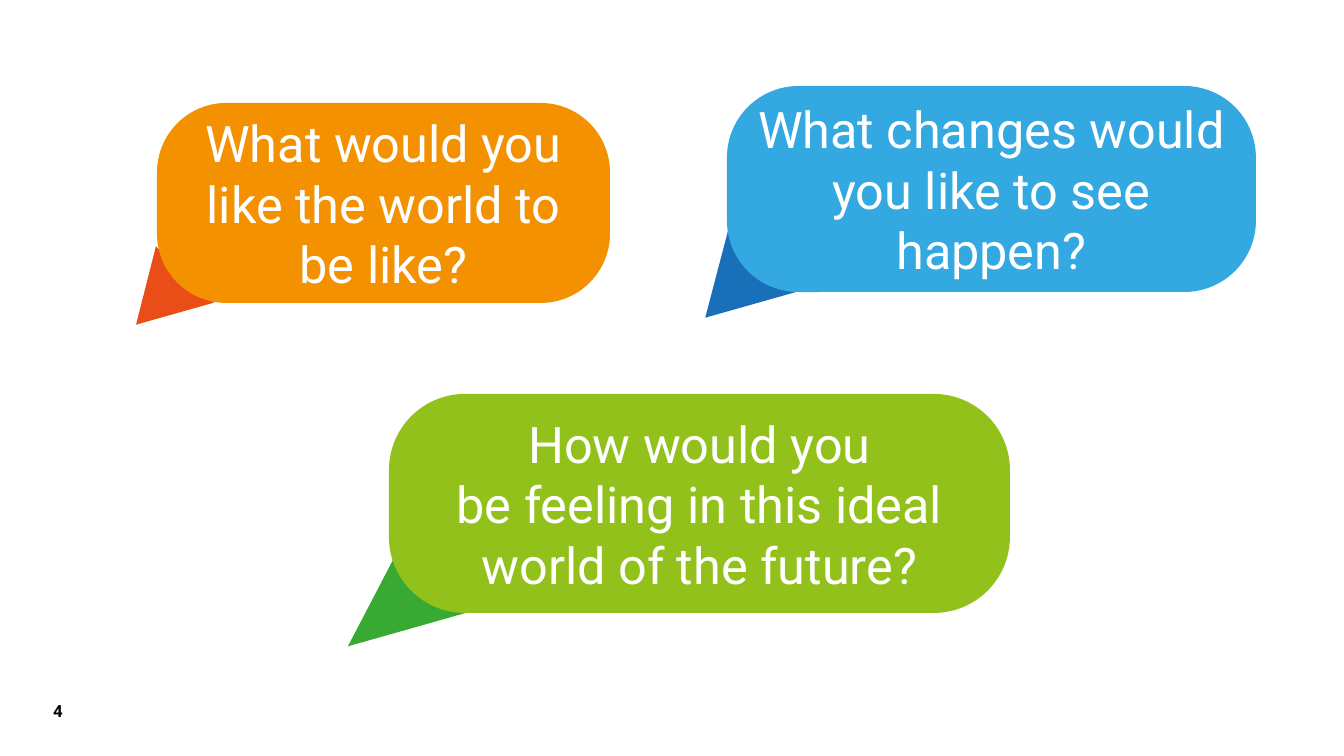
from pptx import Presentation
from pptx.dml.color import RGBColor
from pptx.enum.shapes import MSO_SHAPE
from pptx.enum.text import MSO_ANCHOR, PP_ALIGN
from pptx.util import Emu, Pt

HARD_SPACE = chr(160)


def px(length):
    return Emu(round(length * 914400 / 100.8))


def color(value):
    return RGBColor.from_string(value)


class SlideBuilder:
    font = "Roboto"
    corner = 0.347
    tail_angle = 344.2

    def __init__(self, slide):
        self.slide = slide

    def add_run(self, paragraph, text, size, fill, bold=False):
        run = paragraph.add_run()
        run.text = text
        run.font.name = self.font
        run.font.size = Pt(size)
        run.font.bold = bold
        run.font.color.rgb = color(fill)

    def add_filled(self, shapes, kind, box, fill):
        shape = shapes.add_shape(kind, *map(px, box))
        shape.shadow.inherit = False
        shape.fill.solid()
        shape.fill.fore_color.rgb = color(fill)
        shape.line.fill.background()
        return shape

    def add_bubble(self, text, box, fill, tail_box, tail_fill):
        shapes = self.slide.shapes.add_group_shape().shapes
        tail = self.add_filled(shapes, MSO_SHAPE.ISOSCELES_TRIANGLE, tail_box, tail_fill)
        tail.rotation = self.tail_angle
        body = self.add_filled(shapes, MSO_SHAPE.ROUNDED_RECTANGLE, box, fill)
        body.adjustments[0] = self.corner
        frame = body.text_frame
        frame.word_wrap = True
        frame.vertical_anchor = MSO_ANCHOR.MIDDLE
        paragraph = frame.paragraphs[0]
        paragraph.alignment = PP_ALIGN.CENTER
        self.add_run(paragraph, text, 36, "FFFFFF")

    def add_page_number(self, text, box):
        frame = self.slide.shapes.add_textbox(*map(px, box)).text_frame
        frame.word_wrap = True
        frame.vertical_anchor = MSO_ANCHOR.BOTTOM
        frame.margin_left = frame.margin_right = 0
        frame.margin_top = frame.margin_bottom = 0
        self.add_run(frame.paragraphs[0], text, 12, "000000", bold=True)


def main():
    presentation = Presentation()
    presentation.slide_width = px(1344)
    presentation.slide_height = px(756)
    builder = SlideBuilder(presentation.slides.add_slide(presentation.slide_layouts[6]))

    # Page number
    builder.add_page_number("4", (53, 689, 74, 32))

    # Speech bubbles: text, body box and fill, tail box and fill
    bubbles = [
        ("What would you like the world to be like?",
         (157, 103, 453, 200), "F39100", (125, 245, 81, 70), "E94D18"),
        (f"How would you be{HARD_SPACE}feeling in this ideal world of the future?",
         (389, 394, 621, 219), "93C11C", (334, 546, 153, 81), "38AA34"),
        ("What changes would you like to see happen?",
         (727, 86, 529, 206), "34A9E1", (691, 215, 106, 90), "1A70B8"),
    ]
    for bubble in bubbles:
        builder.add_bubble(*bubble)

    presentation.save("out.pptx")


if __name__ == "__main__":
    main()
